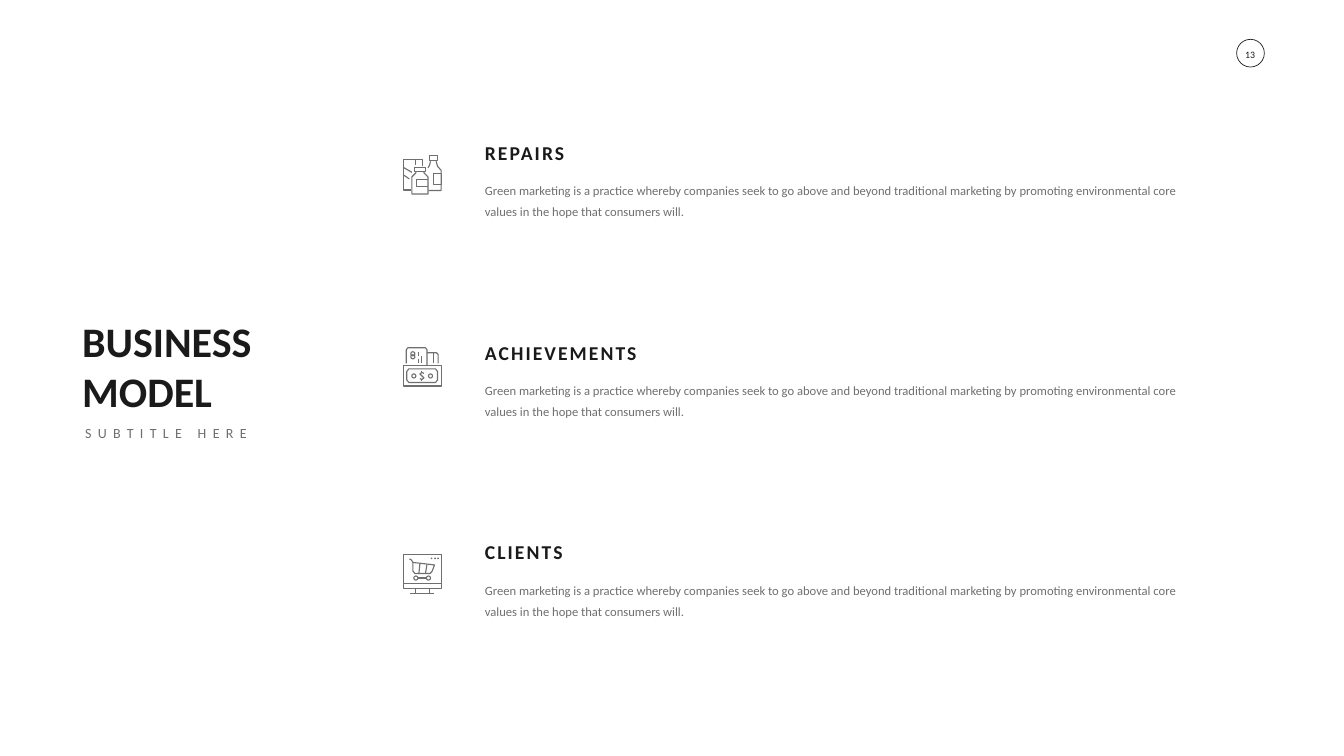
from math import cos, sin, tau

from pptx import Presentation
from pptx.dml.color import RGBColor
from pptx.enum.shapes import MSO_SHAPE
from pptx.enum.text import MSO_ANCHOR, MSO_AUTO_SIZE, PP_ALIGN
from pptx.util import Inches, Pt

INK = RGBColor(0x1A, 0x1A, 0x1A)
GREY = RGBColor(0x6F, 0x6F, 0x6F)
WHITE = RGBColor(0xFF, 0xFF, 0xFF)
FONT = "Calibri"
OVAL = MSO_SHAPE.OVAL
TOP, MIDDLE, BOTTOM = MSO_ANCHOR.TOP, MSO_ANCHOR.MIDDLE, MSO_ANCHOR.BOTTOM
LEFT, CENTER = PP_ALIGN.LEFT, PP_ALIGN.CENTER
FIT = MSO_AUTO_SIZE.SHAPE_TO_FIT_TEXT


def rect(x1, y1, x2, y2):
    return [(x1, y1), (x2, y1), (x2, y2), (x1, y2), (x1, y1)]


def circle(cx, cy, r, steps=16):
    return [(cx + r * cos(tau * i / steps), cy + r * sin(tau * i / steps))
            for i in range(steps + 1)]


# Content: icon strokes are in hundredths of an inch
TITLE = ["BUSINESS", "MODEL"]
SUBTITLE = "SUBTITLE HERE"
PAGE = "13"
BODY = ("Green marketing is a practice whereby companies seek to go above and "
        "beyond traditional marketing by promoting environmental core values "
        "in the hope that consumers will.")

BOTTLES = [
    [(17, 69), (1, 69), (1, 9), (39, 9), (39, 21)],
    [(26, 9), (26, 20)], [(1, 24), (18, 34)], [(1, 39), (13, 47)],
    rect(23, 25, 45, 32),
    [(26, 33), (26, 35), (22, 39), (18, 43), (18, 77), (50, 77), (50, 43),
     (46, 39), (42, 35), (42, 33)],
    [(50, 49), (27, 49), (27, 62), (50, 62)],
    rect(53, 1, 68, 11), [(50, 25), (53, 20), (55, 12)],
    [(66, 12), (69, 22), (76, 30), (76, 70), (51, 70)],
    rect(61, 37, 76, 59),
]
MONEY = [
    rect(1, 36, 77, 77),
    [(12, 43), (65, 43), (69, 48), (69, 65), (65, 70), (12, 70), (8, 65),
     (8, 48), (12, 43)],
    circle(22, 57, 4), circle(55, 57, 4),
    [(42, 52), (38, 50), (34, 53), (38, 57), (42, 61), (38, 64), (34, 62)],
    [(38, 47), (38, 50)], [(38, 64), (38, 67)],
    [(7, 32), (7, 5), (10, 1), (45, 1), (48, 5), (48, 36)],
    [(48, 11), (67, 11), (70, 14), (70, 32)], [(61, 11), (61, 32)],
    circle(20, 13, 4), circle(20, 19, 4),
    [(31, 9), (31, 18)], [(31, 23), (31, 32)], [(38, 18), (38, 32)],
]
SHOP = [
    rect(1, 1, 77, 68), [(1, 58), (77, 58)],
    [(25, 68), (25, 77)], [(53, 68), (53, 77)], [(15, 77), (62, 77)],
    circle(26, 47, 4), circle(51, 47, 4), [(30, 47), (47, 47)],
    [(13, 9), (17, 11), (20, 16), (20, 33), (24, 38), (54, 38), (58, 34),
     (63, 21), (20, 16)],
    [(34, 18), (32, 38)], [(48, 20), (45, 38)],
    *[circle(x, 8, 0.5) for x in (57, 64, 70)],
]
# heading, heading width, icon strokes, icon drop below the row's top
ROWS = [
    ("REPAIRS", 2.1, BOTTLES, 0.33),
    ("ACHIEVEMENTS", 3.65, MONEY, 0.18),
    ("CLIENTS", 2.07, SHOP, 0.33),
]
# Grid in inches
ROW_TOP, ROW_PITCH = 2.75, 3.96
ICON_X, TEXT_X, BODY_W, BODY_DROP = 7.99, 9.52, 14.56, 0.72


def place(shape, x, y, w, h):
    shape.left, shape.top, shape.width, shape.height = map(Inches, (x, y, w, h))


def write(shape, lines, size, color, bold=False, spacing=0, anchor=TOP,
          wrap=False, align=LEFT, before=0, leading=None, fit=FIT):
    tf = shape.text_frame
    tf.word_wrap, tf.auto_size, tf.vertical_anchor = wrap, fit, anchor
    for i, line in enumerate(lines):
        p = tf.add_paragraph() if i else tf.paragraphs[0]
        p.alignment, p.space_before = align, Pt(before)
        if leading:
            p.line_spacing = Pt(leading)
        r = p.add_run()
        r.text = line
        r.font.name, r.font.size, r.font.bold = FONT, Pt(size), bold
        r.font.color.rgb = color
        if spacing:
            r.font._element.set("spc", str(spacing * 100))


def add_text(s, x, y, w, h, lines, size, color, **style):
    write(s.shapes.add_textbox(*map(Inches, (x, y, w, h))), lines, size, color, **style)


def add_oval(s, x, y, d):
    sp = s.shapes.add_shape(OVAL, *map(Inches, (x, y, d, d)))
    sp.shadow.inherit = False
    sp.fill.background()
    return sp


def add_icon(s, x, y, strokes):
    # Ten units per hundredth of an inch keep the circles smooth
    strokes = [[(px * 10, py * 10) for px, py in st] for st in strokes]
    fb = s.shapes.build_freeform(*strokes[0][0], scale=Inches(1) / 1000)
    for i, (start, *rest) in enumerate(strokes):
        if i:
            fb.move_to(*start)
        fb.add_line_segments(rest, close=rest[-1] == start)
    sp = fb.convert_to_shape(Inches(x), Inches(y))
    sp.shadow.inherit = False
    sp.fill.background()
    sp.line.color.rgb, sp.line.width = GREY, Pt(1.6)


def main():
    prs = Presentation()
    prs.slide_width, prs.slide_height = Inches(26.66), Inches(15)
    s = prs.slides.add_slide(prs.slide_layouts[5])
    s.background.fill.solid()
    s.background.fill.fore_color.rgb = WHITE

    # Page number in a ring
    number = add_oval(s, 24.6, 0.85, 0.4)
    number.line.fill.background()
    tf = number.text_frame
    tf.margin_left = tf.margin_right = tf.margin_top = tf.margin_bottom = 0
    write(number, [PAGE], 14, INK, anchor=BOTTOM, align=CENTER, fit=MSO_AUTO_SIZE.NONE)
    ring = add_oval(s, 24.53, 0.78, 0.55)
    ring.line.color.rgb, ring.line.width = INK, Pt(1)

    # Title and subtitle
    title = s.shapes.title
    place(title, 1.53, 6.19, 4.17, 2.12)
    write(title, TITLE, 60, INK, bold=True, anchor=BOTTOM)
    add_text(s, 1.59, 8.37, 3.89, 0.44, [SUBTITLE], 20, GREY, spacing=9, before=4)

    # Rows: icon, heading, body
    for i, (heading, width, strokes, drop) in enumerate(ROWS):
        y = ROW_TOP + i * ROW_PITCH
        add_icon(s, ICON_X, y + drop, strokes)
        add_text(s, TEXT_X, y + BODY_DROP, BODY_W, 0.91, [BODY], 18, GREY,
                 wrap=True, before=24, leading=30)
        add_text(s, TEXT_X, y, width, 0.57, [heading], 28, INK,
                 bold=True, spacing=3, anchor=MIDDLE)

    prs.save("out.pptx")


if __name__ == "__main__":
    main()
